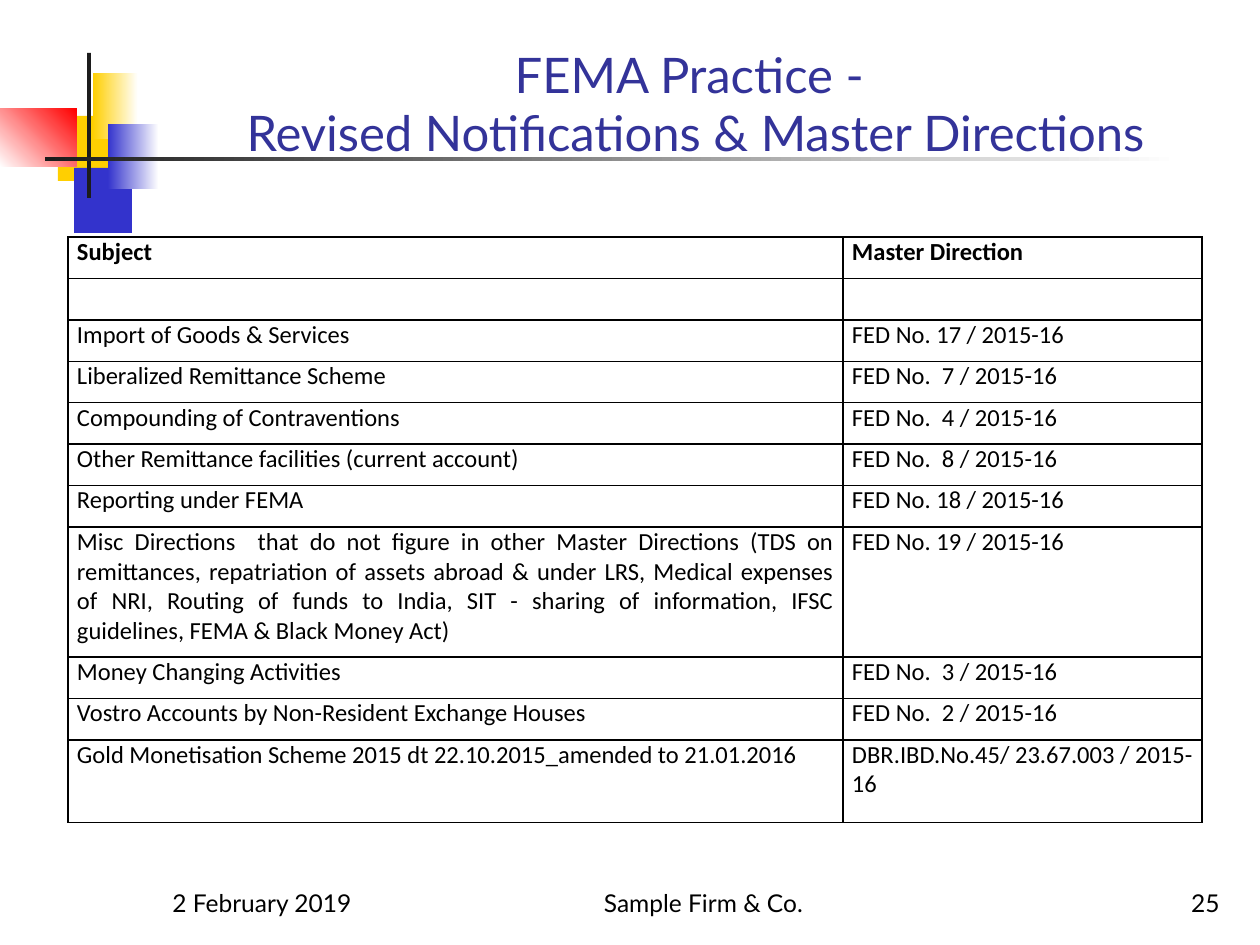
from collections import namedtuple
from dataclasses import dataclass

from lxml import etree
from pptx import Presentation
from pptx.dml.color import RGBColor
from pptx.enum.shapes import MSO_SHAPE
from pptx.enum.text import MSO_ANCHOR, MSO_AUTO_SIZE, PP_ALIGN
from pptx.oxml.ns import qn
from pptx.util import Pt

RECTANGLE = MSO_SHAPE.RECTANGLE
BOTTOM, TOP = MSO_ANCHOR.BOTTOM, MSO_ANCHOR.TOP
LEFT, CENTER = PP_ALIGN.LEFT, PP_ALIGN.CENTER
RIGHT, JUSTIFY = PP_ALIGN.RIGHT, PP_ALIGN.JUSTIFY
NO_AUTOFIT = MSO_AUTO_SIZE.NONE
EMU_PER_PX = 914400 / 126
TITLE_ONLY = 5

Box = namedtuple("Box", "left top width height")


@dataclass(frozen=True)
class Theme:
    """Colours, fonts and type sizes of the deck."""
    black: str = "000000"
    white: str = "FFFFFF"
    ink: str = "1C1C1C"
    yellow: str = "FFCF01"
    blue: str = "3333CC"
    red: str = "FF0000"
    title: str = "333399"
    heading_font: str = "Lato"
    table_font: str = "Calibri"
    title_size: int = 28
    body_size: int = 14
    border: int = 1


THEME = Theme()

ROWS = [
    ("Subject", "Master Direction"),
    ("", ""),
    ("Import of Goods & Services", "FED No. 17 / 2015-16"),
    ("Liberalized Remittance Scheme", "FED No.  7 / 2015-16"),
    ("Compounding of Contraventions", "FED No.  4 / 2015-16"),
    ("Other Remittance facilities (current account)", "FED No.  8 / 2015-16"),
    ("Reporting under FEMA", "FED No. 18 / 2015-16"),
    ("Misc Directions  that do not figure in other Master Directions (TDS on "
     "remittances, repatriation of assets abroad & under LRS, Medical expenses "
     "of NRI, Routing of funds to India, SIT - sharing of information, IFSC "
     "guidelines, FEMA & Black Money Act)", "FED No. 19 / 2015-16"),
    ("Money Changing Activities", "FED No.  3 / 2015-16"),
    ("Vostro Accounts by Non-Resident Exchange Houses", "FED No.  2 / 2015-16"),
    ("Gold Monetisation Scheme 2015 dt 22.10.2015_amended to 21.01.2016",
     "DBR.IBD.No.45/ 23.67.003 / 2015-16"),
]


def px(length):
    """Turn pixels into EMU."""
    return round(length * EMU_PER_PX)


def set_values(target, values):
    """Set each attribute named in a dict."""
    for name, value in values.items():
        setattr(target, name, value)


def place(shape, box):
    """Move and size a shape to a box."""
    set_values(shape, {name: px(value) for name, value in box._asdict().items()})


def write(frame, text, align, font, size, color, bold=False):
    """Fill a text frame and format its paragraphs and runs."""
    frame.text = text
    for para in frame.paragraphs:
        para.alignment = align
        for span in para.runs:
            set_values(span.font, {"name": font, "size": Pt(size), "bold": bold})
            span.font.color.rgb = RGBColor.from_string(color)


def add_block(page, box, colors, angle=0):
    """Add a rectangle with a solid or two-stop gradient fill."""
    block = page.shapes.add_shape(RECTANGLE, *map(px, box))
    block.shadow.inherit = False
    block.line.fill.background()
    if len(colors) == 1:
        block.fill.solid()
        block.fill.fore_color.rgb = RGBColor.from_string(colors[0])
        return
    block.fill.gradient()
    block.fill.gradient_angle = angle
    for stop, color in zip(block.fill.gradient_stops, colors):
        stop.color.rgb = RGBColor.from_string(color)


def add_ornament(page, box):
    """Build the coloured blocks and crossing bars beside the title."""
    blocks = [
        (Box(58, 63, 60, 65), [THEME.yellow], 0),
        (Box(74, 115, 58, 65), [THEME.blue], 0),
        (Box(93, 20, 45, 66), [THEME.yellow, THEME.white], 0),
        (Box(108, 71, 51, 65), [THEME.blue, THEME.white], 0),
        (Box(0, 56, 77, 58), [THEME.white, THEME.red], 45),
        (Box(87, 0, 4, 145), [THEME.ink], 0),
        (Box(45, 104, box.width - 45, 4), [THEME.ink, THEME.white], 0),
    ]
    for part, colors, angle in blocks:
        spot = part._replace(left=box.left + part.left, top=box.top + part.top)
        add_block(page, spot, colors, angle)


def add_title(page, box):
    """Place the two-line title in its placeholder, above the ornament."""
    title = page.shapes.title
    place(title, box)
    set_values(title.text_frame, {"vertical_anchor": BOTTOM, "word_wrap": True,
                                  "auto_size": NO_AUTOFIT})
    write(title.text_frame, "FEMA Practice - \vRevised Notifications & Master Directions",
          CENTER, THEME.heading_font, THEME.title_size, THEME.title)
    title.element.getparent().append(title.element)


def add_borders(cell):
    """Draw all four borders of a cell."""
    properties = cell._tc.get_or_add_tcPr()
    for position, side in enumerate(("a:lnL", "a:lnR", "a:lnT", "a:lnB")):
        line = etree.Element(qn(side), w=str(Pt(THEME.border)))
        fill = etree.SubElement(line, qn("a:solidFill"))
        etree.SubElement(fill, qn("a:srgbClr"), val=THEME.black)
        properties.insert(position, line)


def add_directions_table(page, box):
    """Build the table of subjects and master directions."""
    table = page.shapes.add_table(len(ROWS), 2, *map(px, box)).table
    set_values(table, {"first_row": False, "horz_banding": False})
    subject_width, tall_row = 775, 130
    for column, width in zip(table.columns, (subject_width, box.width - subject_width)):
        column.width = px(width)
    single = (box.height - tall_row) / len(ROWS)
    heights = {7: tall_row, len(ROWS) - 1: 2 * single}
    for index, texts in enumerate(ROWS):
        table.rows[index].height = px(heights.get(index, single))
        for cell, text in zip(table.rows[index].cells, texts):
            set_values(cell, {"margin_left": px(9), "margin_right": px(9),
                              "margin_top": 0, "margin_bottom": 0,
                              "vertical_anchor": TOP})
            cell.fill.background()
            add_borders(cell)
            write(cell.text_frame, text, JUSTIFY, THEME.table_font,
                  THEME.body_size, THEME.black, bold=index == 0)


def add_footer(page, box):
    """Place date, firm name and page number along the foot."""
    parts = [
        ("2 February 2019", 0, 262, LEFT),
        ("Sample Firm & Co.", 344, 399, CENTER),
        ("25", box.width - 262, 262, RIGHT),
    ]
    for text, offset, width, align in parts:
        spot = box._replace(left=box.left + offset, width=width)
        frame = page.shapes.add_textbox(*map(px, spot)).text_frame
        set_values(frame, {"word_wrap": True, "vertical_anchor": BOTTOM})
        write(frame, text, align, THEME.heading_font, THEME.body_size, THEME.black)


def main():
    """Build and save the deck."""
    deck = Presentation()
    set_values(deck, {"slide_width": px(1260), "slide_height": px(945)})
    page = deck.slides.add_slide(deck.slide_layouts[TITLE_ONLY])
    add_ornament(page, Box(0, 53, 1179, 181))
    add_footer(page, Box(160, 861, 1072, 63))
    add_title(page, Box(159, 29, 1073, 139))
    add_directions_table(page, Box(68, 237, 1134, 586))
    deck.save("out.pptx")


if __name__ == "__main__":
    main()
